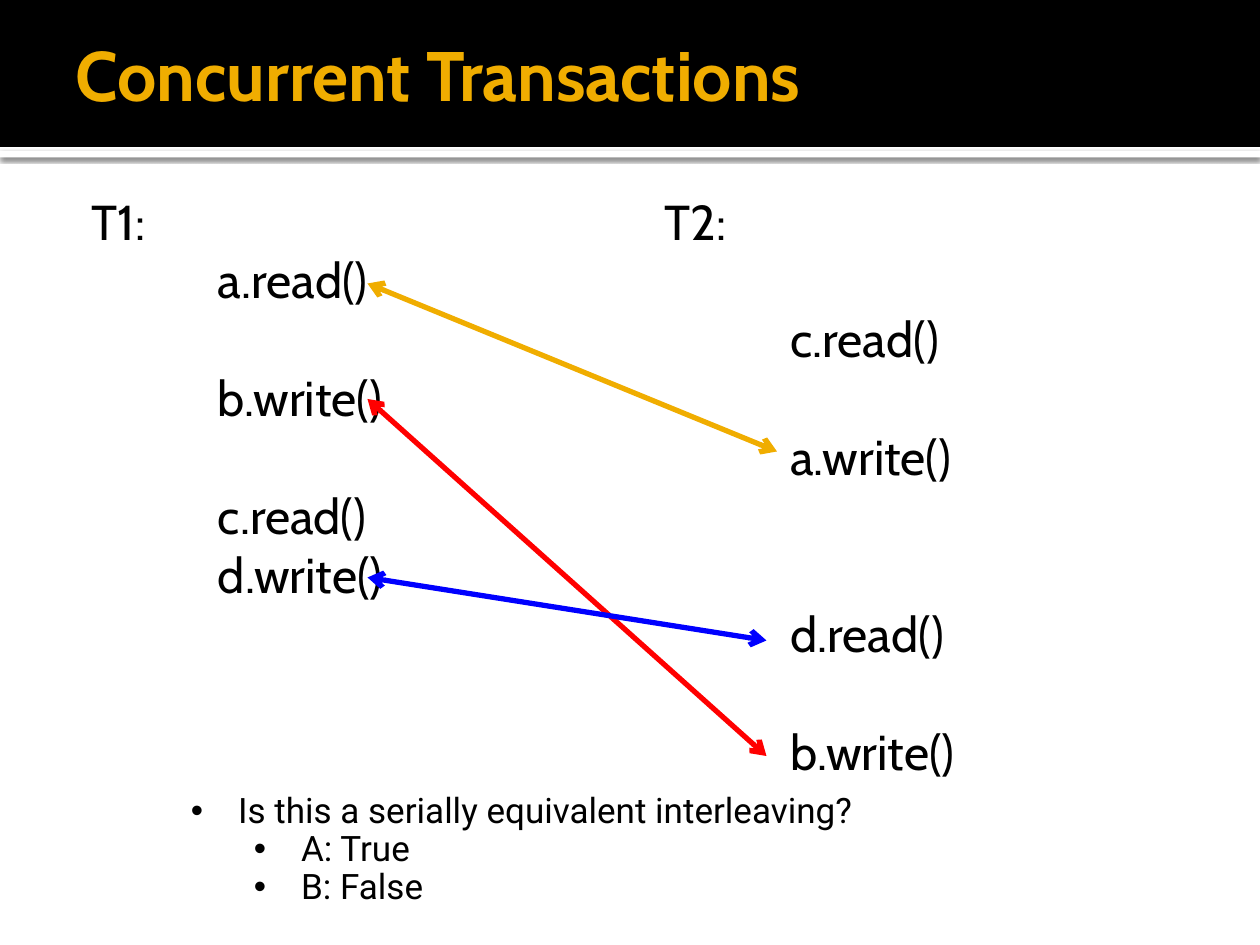
from lxml.etree import SubElement
from pptx import Presentation
from pptx.dml.color import RGBColor
from pptx.enum.shapes import MSO_CONNECTOR, MSO_SHAPE
from pptx.enum.text import MSO_ANCHOR, MSO_AUTO_SIZE, PP_ALIGN
from pptx.oxml.ns import qn
from pptx.util import Pt

BLACK = RGBColor(0x00, 0x00, 0x00)
WHITE = RGBColor(0xFF, 0xFF, 0xFF)
AMBER = RGBColor(0xF0, 0xAD, 0x00)
RED = RGBColor(0xFF, 0x00, 0x00)
BLUE = RGBColor(0x00, 0x00, 0xFF)

STEP_HEIGHT = 33.7
HEADING_INDENT = 9.36
OPERATION_INDENT = 81.36

T1_SCHEDULE = [(1, "a.read()"), (3, "b.write()"), (5, "c.read()"), (6, "d.write()")]
T2_SCHEDULE = [(2, "c.read()"), (4, "a.write()"), (7, "d.read()"), (9, "b.write()")]
CONFLICTS = [
    ((210, 162), (444, 258), AMBER),
    ((210, 228), (438, 432), RED),
    ((210, 330), (438, 366), BLUE),
]
QUESTION = [
    (0, "Is this a serially equivalent interleaving?"),
    (1, "A: True"),
    (1, "B: False"),
]


def place(shape, left, top, width, height):
    """Move and size a shape."""
    shape.left, shape.top = Pt(left), Pt(top)
    shape.width, shape.height = Pt(width), Pt(height)


def set_insets(frame, left, top, right, bottom):
    """Set the four inner margins of a text frame."""
    frame.margin_left, frame.margin_top = Pt(left), Pt(top)
    frame.margin_right, frame.margin_bottom = Pt(right), Pt(bottom)


def style_runs(paragraph, name, size, color=BLACK, bold=False):
    """Apply one font to every run of a paragraph."""
    for run in paragraph.runs:
        font = run.font
        font.name, font.size, font.bold = name, Pt(size), bold
        font.color.rgb = color


def indent(paragraph, margin, first=0, bullet=None):
    """Set the indent of a paragraph and its bullet, if any."""
    properties = paragraph._p.get_or_add_pPr()
    properties.set("marL", str(Pt(margin)))
    properties.set("indent", str(Pt(first)))
    if bullet:
        SubElement(properties, qn("a:buFont"), typeface="Arial")
        SubElement(properties, qn("a:buChar"), char=bullet)
    else:
        SubElement(properties, qn("a:buNone"))


def add_band(slide, layer, top, height, color):
    """Add a full-width band behind the placeholders."""
    band = slide.shapes.add_shape(MSO_SHAPE.RECTANGLE, 0, Pt(top), Pt(720), Pt(height))
    band.shadow.inherit = False
    band.fill.solid()
    band.fill.fore_color.rgb = color
    band.line.fill.background()
    slide.shapes._spTree.insert(2 + layer, band._element)
    return band


def cast_shadow(band):
    """Give a band a soft shadow straight below it."""
    effects = band._element.spPr.find(qn("a:effectLst"))
    shadow = SubElement(
        effects, qn("a:outerShdw"), blurRad=str(Pt(2.5)), dist=str(Pt(0.8)),
        dir="5400000", algn="tl", rotWithShape="0",
    )
    color = SubElement(shadow, qn("a:srgbClr"), val=str(BLACK))
    SubElement(color, qn("a:alpha"), val="60000")


def fill_title(title, text):
    """Format the title placeholder."""
    place(title, 36, 6, 648, 72)
    frame = title.text_frame
    frame.text = text
    frame.auto_size = MSO_AUTO_SIZE.NONE
    frame.vertical_anchor = MSO_ANCHOR.MIDDLE
    set_insets(frame, 7.2, 3.6, 3.6, 3.6)
    heading = frame.paragraphs[0]
    heading.alignment = PP_ALIGN.LEFT
    style_runs(heading, "Cabin", 40, AMBER, bold=True)


def fill_schedule(body, left, inset, heading, operations):
    """List a transaction's operations, each at its time step."""
    place(body, left, 102, 318, 402)
    frame = body.text_frame
    frame.auto_size = MSO_AUTO_SIZE.NONE
    frame.vertical_anchor = MSO_ANCHOR.TOP
    set_insets(frame, inset, 7.2, 7.2, 3.6)
    previous = -1
    for step, text in [(0, heading), *operations]:
        entry = frame.add_paragraph() if step else frame.paragraphs[0]
        entry.text = text
        indent(entry, OPERATION_INDENT if step else HEADING_INDENT)
        entry.space_before = Pt((step - previous - 1) * STEP_HEIGHT)
        entry.space_after = Pt(0)
        style_runs(entry, "Cabin", 28)
        previous = step


def add_conflict(slide, start, end, color):
    """Link two conflicting operations with a double-headed arrow."""
    arrow = slide.shapes.add_connector(
        MSO_CONNECTOR.STRAIGHT, *(Pt(value) for value in (*start, *end))
    )
    arrow.line.color.rgb = color
    arrow.line.width = Pt(3)
    outline = arrow.line._get_or_add_ln()
    for tip in ("a:headEnd", "a:tailEnd"):
        SubElement(outline, qn(tip), type="arrow")
    SubElement(arrow._element.spPr, qn("a:effectLst"))


def add_question(slide, lines):
    """Add the bulleted question and its answers."""
    box = slide.shapes.add_textbox(Pt(102), Pt(450), Pt(397.5), Pt(73.5))
    frame = box.text_frame
    frame.word_wrap = False
    frame.auto_size = MSO_AUTO_SIZE.SHAPE_TO_FIT_TEXT
    frame.text = "\n".join(text for _, text in lines)
    for paragraph, (level, _) in zip(frame.paragraphs, lines):
        paragraph.level = level
        indent(paragraph, 27 + 36 * level, -27, "•")
        paragraph.line_spacing = 0.9
        style_runs(paragraph, "Roboto", 20)


def main():
    """Build the slide and save it."""
    deck = Presentation()
    deck.slide_width, deck.slide_height = Pt(720), Pt(540)
    slide = deck.slides.add_slide(deck.slide_layouts[3])
    title, first, second = slide.placeholders
    cast_shadow(add_band(slide, 0, 86.4, 3.6, WHITE))
    add_band(slide, 1, 0, 84, BLACK)
    fill_title(title, "Concurrent Transactions")
    fill_schedule(first, 36, 7.2, "T1:", T1_SCHEDULE)
    fill_schedule(second, 366, 4.32, "T2:", T2_SCHEDULE)
    for start, end, color in CONFLICTS:
        add_conflict(slide, start, end, color)
    add_question(slide, QUESTION)
    deck.save("out.pptx")


if __name__ == "__main__":
    main()
